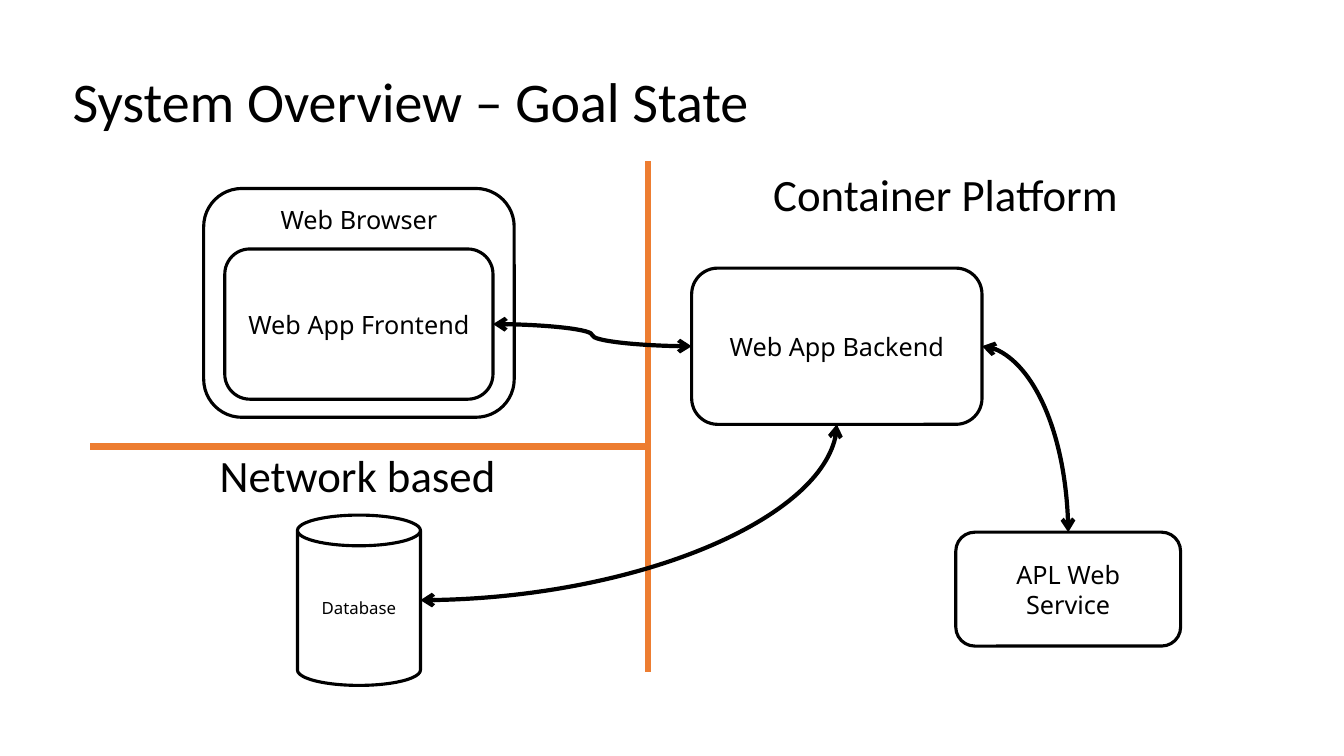
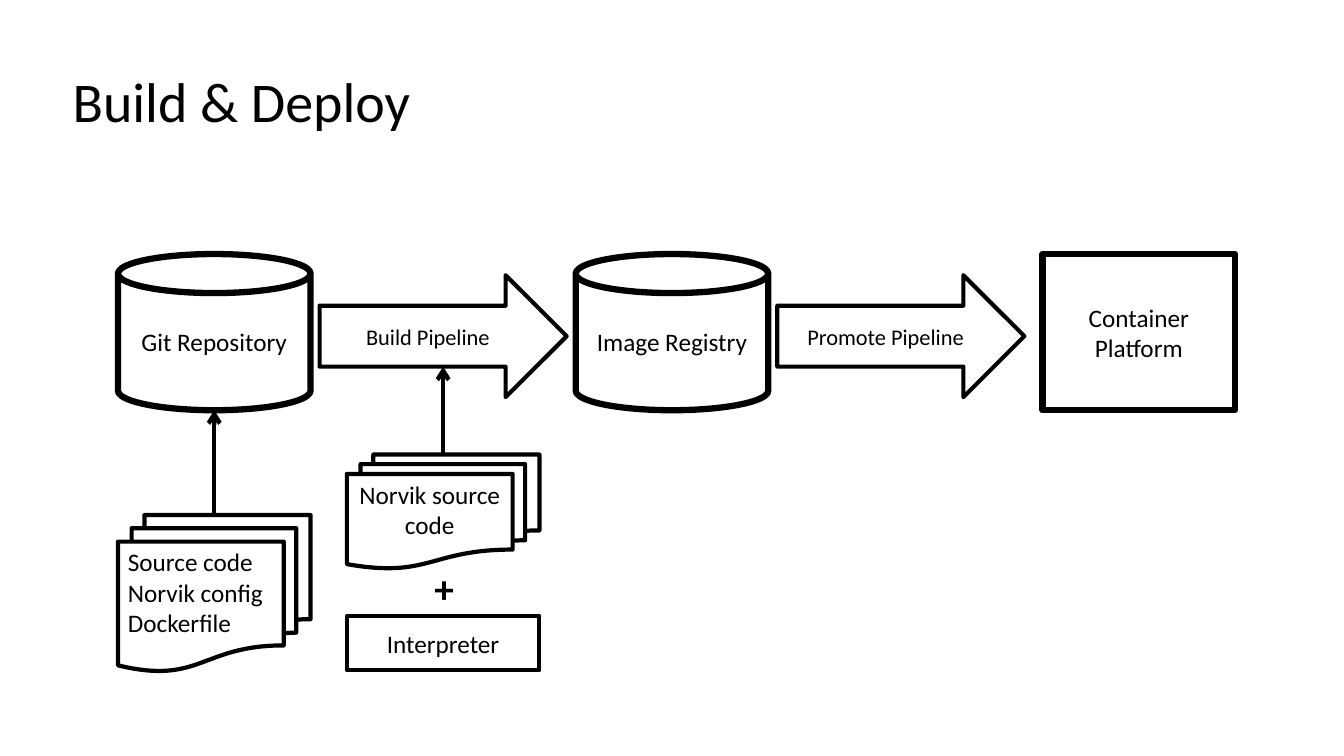
from pptx import Presentation
from pptx.dml.color import RGBColor
from pptx.enum import shapes, text
from pptx.oxml.ns import qn
from pptx.util import Inches, Pt
from lxml import etree

BLACK, WHITE, ORANGE = "000000", "FFFFFF", "ED7D31"
SANS, NOTO = "Calibri", "Noto Sans"
KIND = shapes.MSO_SHAPE
LINK = shapes.MSO_CONNECTOR
ALIGN = text.PP_ALIGN
MID, TOP = text.MSO_ANCHOR.MIDDLE, text.MSO_ANCHOR.TOP
ROUND, CAN, RECT = KIND.ROUNDED_RECTANGLE, KIND.CAN, KIND.RECTANGLE
ARROW, DOCS = KIND.RIGHT_ARROW, KIND.FLOWCHART_MULTIDOCUMENT

# Overview: label, kind, (left, top, width, height), text size, anchor
PARTS = [
    ("Web Browser", ROUND, (2.02, 1.87, 3.08, 2.27), 18, TOP),
    ("Web App Frontend", ROUND, (2.23, 2.47, 2.66, 1.49), 18, MID),
    ("Web App Backend", ROUND, (6.86, 2.66, 2.88, 1.55), 18, MID),
    ("APL Web Service", ROUND, (9.48, 5.28, 2.23, 1.13), 18, MID),
    ("Database", CAN, (2.95, 5.11, 1.22, 1.69), 12, MID),
]
# Start part and side, end part and side, curve preset
CURVES = [
    ("Web App Frontend", "right", "Web App Backend", "left", "curvedConnector3"),
    ("Web App Backend", "right", "APL Web Service", "top", "curvedConnector2"),
    ("Database", "right", "Web App Backend", "bottom", "curvedConnector2"),
]
SPLIT_X, SPLIT_Y = 6.43, 4.43
ZONES = [
    ("Container Platform", (7.57, 1.6, 4.49, 0.64)),
    ("Network based", (2.08, 4.39, 2.97, 0.64)),
]

# Build & Deploy: stores and the pipelines that follow them
STAGES = [("Git Repository", "Build Pipeline"), ("Image Registry", "Promote Pipeline")]
LEFT, PITCH, ROW = 1.17, 4.54, 2.52
WIDE, HIGH = 1.91, 1.55
PIPE_X, PIPE_Y, PIPE_W, PIPE_H = LEFT + 2, 2.73, 2.45, 1.21
TOOL_X = 3.44


def rgb(code):
    return RGBColor.from_string(code)


def write(frame, paras, size, font=SANS, align=ALIGN.CENTER, anchor=MID, bold=False):
    """Fill a frame; each paragraph is a list of lines."""
    frame.word_wrap = True
    frame.vertical_anchor = anchor
    for i, lines in enumerate(paras):
        para = frame.add_paragraph() if i else frame.paragraphs[0]
        para.alignment = align
        for j, line in enumerate(lines):
            if j:
                para.add_line_break()
            run = para.add_run()
            run.text = line
            run.font.name, run.font.size = font, Pt(size)
            run.font.bold = bold
            run.font.color.rgb = rgb(BLACK)


def start(deck, title):
    slide = deck.slides.add_slide(deck.slide_layouts[5])
    head = slide.shapes.title
    head.left, head.top, head.width, head.height = map(Inches, (0.62, 0.47, 12.08, 1.13))
    write(head.text_frame, [[title]], 40, align=ALIGN.LEFT)
    head.text_frame.paragraphs[0].line_spacing = 0.9
    return slide


def block(slide, kind, box, paras, size=18, line=3, fill=None, **style):
    """Add an outlined shape with text."""
    shape = slide.shapes.add_shape(kind, *map(Inches, box))
    shape.shadow.inherit = False
    if fill:
        shape.fill.solid()
        shape.fill.fore_color.rgb = rgb(fill)
    else:
        shape.fill.background()
    shape.line.color.rgb = rgb(BLACK)
    shape.line.width = Pt(line)
    write(shape.text_frame, paras, size, **style)
    return shape


def label(slide, words, box, size, **style):
    area = slide.shapes.add_textbox(*map(Inches, box))
    write(area.text_frame, [[words]], size, align=ALIGN.LEFT, anchor=TOP, **style)


def side(shape, name):
    """Middle of one side of a shape."""
    x, y = shape.left + shape.width // 2, shape.top + shape.height // 2
    return {
        "top": (x, shape.top),
        "bottom": (x, shape.top + shape.height),
        "left": (shape.left, y),
        "right": (shape.left + shape.width, y),
    }[name]


def link(slide, a, b, color=BLACK, width=3, ends=(), curve=None):
    kind = LINK.CURVE if curve else LINK.STRAIGHT
    wire = slide.shapes.add_connector(kind, *a, *b)
    wire.line.color.rgb = rgb(color)
    wire.line.width = Pt(width)
    props = wire._element.spPr
    if curve:
        props.find(qn("a:prstGeom")).set("prst", curve)
    for end in ends:
        etree.SubElement(props.find(qn("a:ln")), qn("a:" + end), type="arrow")
    etree.SubElement(props, qn("a:effectLst"))


def overview(deck):
    slide = start(deck, "System Overview – Goal State")
    for a, b in [((SPLIT_X, 1.6), (SPLIT_X, 6.67)), ((SPLIT_X, SPLIT_Y), (0.89, SPLIT_Y))]:
        link(slide, map(Inches, a), map(Inches, b), ORANGE, 4.5)
    made = {}
    for name, kind, box, size, anchor in PARTS:
        made[name] = block(slide, kind, box, [[name]], size, 2.25, WHITE,
                           font=NOTO, anchor=anchor)
    for a, out, b, into, curve in CURVES:
        link(slide, side(made[a], out), side(made[b], into),
             ends=("headEnd", "tailEnd"), curve=curve)
    for words, box in ZONES:
        label(slide, words, box, 32)


def deploy(deck):
    slide = start(deck, "Build & Deploy")
    stores, pipes = [], []
    for i, (store, pipe) in enumerate(STAGES):
        shift = i * PITCH
        stores.append(block(slide, CAN, (LEFT + shift, ROW, WIDE, HIGH),
                            [[store]], line=4.5, fill=WHITE))
        pipes.append(block(slide, ARROW, (PIPE_X + shift, PIPE_Y, PIPE_W, PIPE_H),
                           [[pipe]], 16))
    block(slide, RECT, (10.34, ROW, WIDE, HIGH), [["Container Platform"]], line=4.5)

    code = block(slide, DOCS, (LEFT, 5.11, WIDE, HIGH),
                 [["Source code", "Norvik config"], ["Dockerfile"]],
                 align=ALIGN.LEFT, anchor=TOP)
    tool = block(slide, DOCS, (TOOL_X, 4.51, WIDE, 1.13),
                 [["Norvik source code"]], anchor=TOP)
    block(slide, RECT, (TOOL_X, 6.11, WIDE, 0.54), [["Interpreter"]])
    label(slide, "+", (4.21, 5.55, 0.61, 0.57), 28, bold=True)

    link(slide, side(code, "top"), side(stores[0], "bottom"), ends=["tailEnd"])
    x, y = side(pipes[0], "bottom")
    shaft = y - pipes[0].height // 4
    link(slide, side(tool, "top"), (x, shaft), ends=["tailEnd"])


def main():
    deck = Presentation()
    deck.slide_width, deck.slide_height = Inches(13.33), Inches(7.5)
    overview(deck)
    deploy(deck)
    deck.save("out.pptx")


if __name__ == "__main__":
    main()
